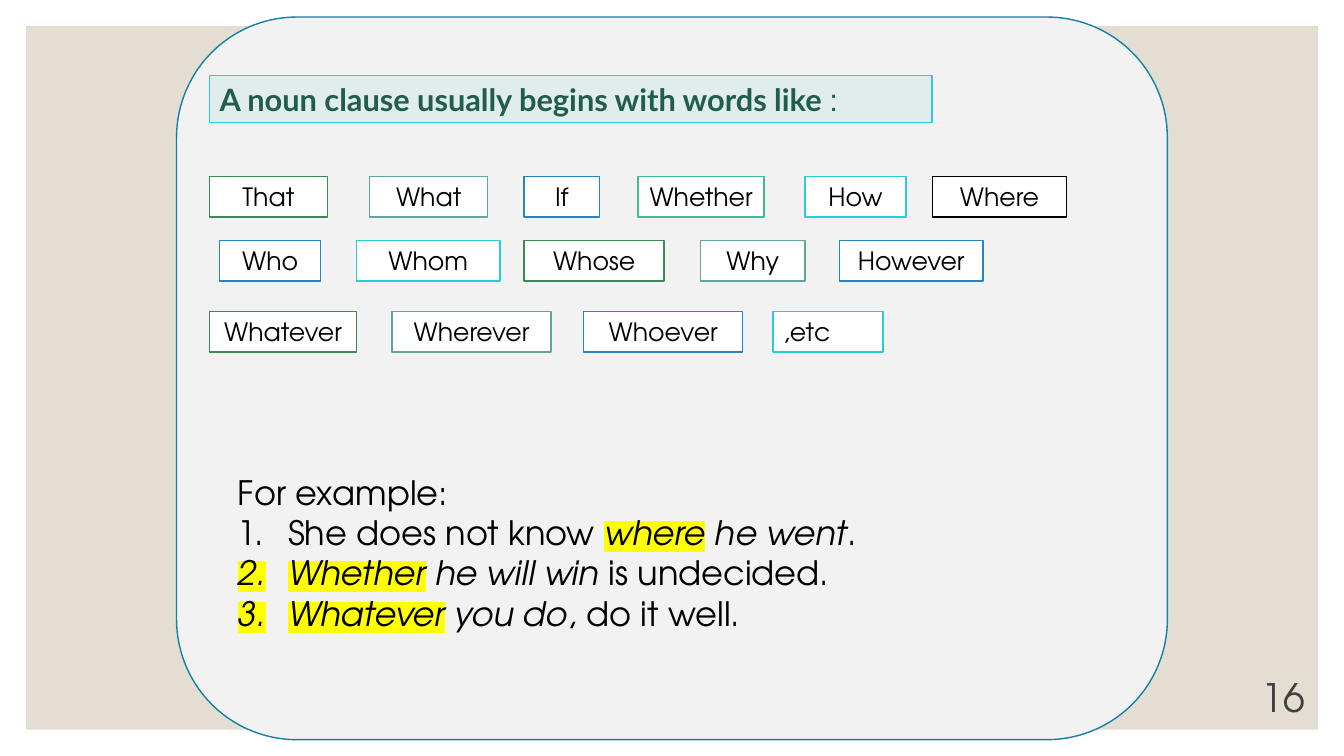
import pptx
import pptx.util
from lxml import etree
from pptx.dml.color import RGBColor
from pptx.enum.shapes import MSO_SHAPE
from pptx.enum.text import MSO_ANCHOR, MSO_AUTO_SIZE, PP_ALIGN
from pptx.oxml.ns import qn
from pptx.util import Cm

BLACK = RGBColor(0x00, 0x00, 0x00)
WHITE = RGBColor(0xFF, 0xFF, 0xFF)
BEIGE = RGBColor(0xE3, 0xDE, 0xD1)
PANEL_GREY = RGBColor(0xF2, 0xF2, 0xF2)
PANEL_BLUE = RGBColor(0x15, 0x80, 0xA9)
PALE_TEAL = RGBColor(0xE0, 0xED, 0xEC)
DARK_GREEN = RGBColor(0x21, 0x5D, 0x4C)
NUMBER_GREY = RGBColor(0x40, 0x40, 0x40)
CYAN = RGBColor(0x27, 0xCE, 0xD7)
GREEN = RGBColor(0x3E, 0x88, 0x53)
SAGE = RGBColor(0x62, 0xA3, 0x9F)
BLUE = RGBColor(0x26, 0x83, 0xC6)
MINT = RGBColor(0x42, 0xBA, 0x97)
YELLOW = RGBColor(0xFF, 0xFF, 0x00)

MAIN_FONT = "TeX Gyre Adventor"

# Each row: top, then (word, left, width, outline), all in centimetres
WORD_ROWS = [
    (4.45, [("That", 5.28, 2.97, GREEN), ("What", 9.32, 2.97, SAGE),
            ("If", 13.21, 1.9, BLUE), ("Whether", 16.08, 3.18, MINT),
            ("How", 20.29, 2.54, CYAN), ("Where", 23.5, 3.38, BLACK)]),
    (6.06, [("Who", 5.54, 2.54, BLUE), ("Whom", 8.99, 3.61, CYAN),
            ("Whose", 13.21, 3.53, GREEN), ("Why", 17.65, 2.64, SAGE),
            ("However", 21.16, 3.61, BLUE)]),
    (7.85, [("Whatever", 5.28, 3.71, GREEN), ("Wherever", 9.88, 4.01, SAGE),
            ("Whoever", 14.71, 4.01, BLUE), (",etc", 19.48, 2.77, CYAN)]),
]
WORD_HEIGHT = 1.02

# Each sentence: text before, clause marker, rest of the clause, text after
EXAMPLES = [
    ("She does not know ", "where", " he went", "."),
    ("", "Whether", " he will win ", "is undecided."),
    ("", "Whatever", " you do", ", do it well."),
]


def place(shape, left, top, width, height):
    shape.left, shape.top = Cm(left), Cm(top)
    shape.width, shape.height = Cm(width), Cm(height)


def paint(shape, fill, outline=None):
    shape.fill.solid()
    shape.fill.fore_color.rgb = fill
    if outline is None:
        shape.line.fill.background()
    else:
        shape.line.color.rgb = outline
        shape.line.width = pptx.util.Pt(1)


def add_box(page, kind, bounds, fill, outline=None):
    box = page.shapes.add_shape(kind, *map(Cm, bounds))
    box.shadow.inherit = False
    paint(box, fill, outline)
    return box


def prepare_frame(shape, anchor):
    frame = shape.text_frame
    frame.word_wrap = True
    frame.auto_size = MSO_AUTO_SIZE.NONE
    frame.vertical_anchor = anchor
    return frame


def add_span(para, text, size=18, font=MAIN_FONT, color=BLACK,
             bold=False, italic=False, highlight=None):
    span = para.add_run()
    span.text = text
    span.font.size = pptx.util.Pt(size)
    span.font.name = font
    span.font.bold = bold
    span.font.italic = italic
    span.font.color.rgb = color
    if highlight is not None:
        mark = etree.Element(qn("a:highlight"))
        etree.SubElement(mark, qn("a:srgbClr"), val=str(highlight))
        span.font._element.find(qn("a:solidFill")).addnext(mark)


def set_bullet(para, indent, numbered):
    properties = para._p.get_or_add_pPr()
    properties.set("marL", str(Cm(indent)))
    properties.set("indent", str(-Cm(indent)))
    if numbered:
        etree.SubElement(properties, qn("a:buFont"), typeface="+mj-lt")
        etree.SubElement(properties, qn("a:buAutoNum"), type="arabicPeriod")
    else:
        etree.SubElement(properties, qn("a:buNone"))


def bring_to_front(shape):
    shape._element.getparent().append(shape._element)


def fill_heading(title):
    place(title, 5.28, 1.9, 18.21, 1.19)
    paint(title, PALE_TEAL, CYAN)
    para = prepare_frame(title, MSO_ANCHOR.MIDDLE).paragraphs[0]
    para.alignment = PP_ALIGN.LEFT
    add_span(para, "A noun clause usually begins with words like ",
             size=22, font="Lato", color=DARK_GREEN, bold=True)
    add_span(para, ":", size=22, font="Arial", color=DARK_GREEN)
    bring_to_front(title)


def add_word(page, word, left, top, width, outline):
    box = add_box(page, MSO_SHAPE.RECTANGLE, (left, top, width, WORD_HEIGHT),
                  WHITE, outline)
    para = prepare_frame(box, MSO_ANCHOR.MIDDLE).paragraphs[0]
    para.alignment = PP_ALIGN.LEFT if word == ",etc" else PP_ALIGN.CENTER
    add_span(para, word)


def fill_examples(body):
    place(body, 5.74, 11.76, 23.06, 4.37)
    frame = prepare_frame(body, MSO_ANCHOR.TOP)
    intro = frame.paragraphs[0]
    intro.space_before = pptx.util.Pt(0)
    set_bullet(intro, 0, numbered=False)
    add_span(intro, "For example:", size=24)
    for before, marker, clause, after in EXAMPLES:
        para = frame.add_paragraph()
        para.space_before = pptx.util.Pt(0)
        set_bullet(para, 1.27, numbered=True)
        if before:
            add_span(para, before, size=24)
        add_span(para, marker, size=24, italic=True, highlight=YELLOW)
        add_span(para, clause, size=24, italic=True)
        add_span(para, after, size=24)
    bring_to_front(body)


def add_page_number(page, number):
    box = page.shapes.add_textbox(Cm(29.08), Cm(17.53), Cm(4.06), Cm(0.76))
    para = prepare_frame(box, MSO_ANCHOR.BOTTOM).paragraphs[0]
    para.alignment = PP_ALIGN.RIGHT
    add_span(para, number, size=28, color=NUMBER_GREY)


def main():
    deck = pptx.Presentation()
    deck.slide_width, deck.slide_height = Cm(33.87), Cm(19.05)
    page = deck.slides.add_slide(deck.slide_layouts[1])
    title, body = page.placeholders

    add_box(page, MSO_SHAPE.RECTANGLE, (0.66, 0.66, 32.56, 17.73), BEIGE)
    add_box(page, MSO_SHAPE.ROUNDED_RECTANGLE, (4.45, 0.43, 24.97, 18.21),
            PANEL_GREY, PANEL_BLUE)
    fill_heading(title)
    for top, words in WORD_ROWS:
        for word, left, width, outline in words:
            add_word(page, word, left, top, width, outline)
    fill_examples(body)
    add_page_number(page, "16")
    deck.save("out.pptx")


if __name__ == "__main__":
    main()
